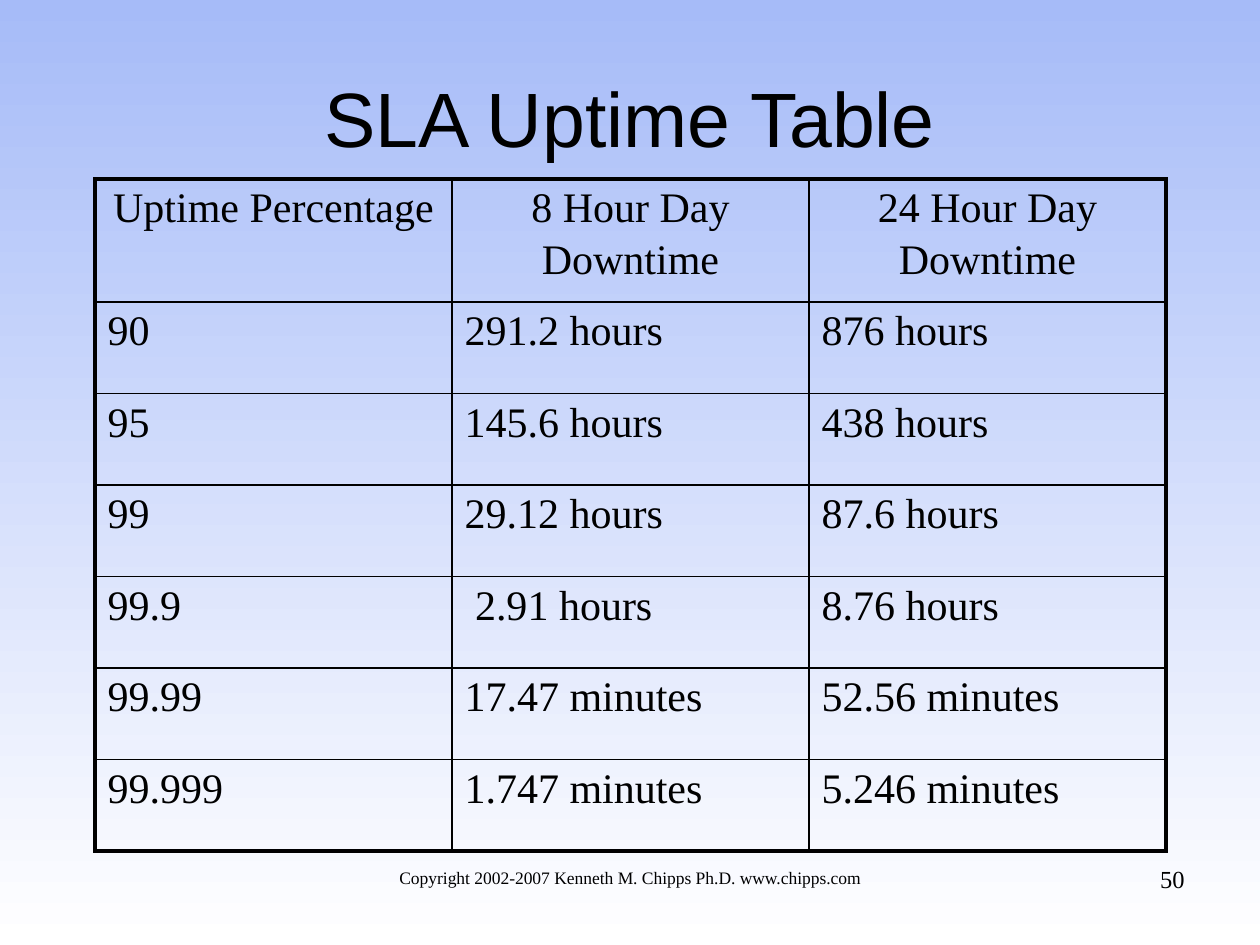
"""Build the SLA uptime table slide."""
import pptx
import pptx.dml.color
import pptx.enum.text
import pptx.oxml
import pptx.oxml.ns
import pptx.util

ALIGN = pptx.enum.text.PP_ALIGN
ANCHOR = pptx.enum.text.MSO_ANCHOR

HEADINGS = ["Uptime Percentage", "8 Hour Day\nDowntime", "24 Hour Day\nDowntime"]
UPTIMES = [
    ["90", "291.2 hours", "876 hours"],
    ["95", "145.6 hours", "438 hours"],
    ["99", "29.12 hours", "87.6 hours"],
    ["99.9", " 2.91 hours", "8.76 hours"],
    ["99.99", "17.47 minutes", "52.56 minutes"],
    ["99.999", "1.747 minutes", "5.246 minutes"],
]


def emu(px):
    return pptx.util.Emu(round(px * 914400 / 126))


def color(value):
    return pptx.dml.color.RGBColor.from_string(value)


class SlideBuilder:
    ink = "000000"
    serif = "Times New Roman"
    sans = "Arial"
    thin, thick = 1, 2.25

    def __init__(self, presentation):
        self.slide = presentation.slides.add_slide(presentation.slide_layouts[6])

    def background(self, top, bottom):
        fill = self.slide.background.fill
        fill.gradient()
        fill.gradient_angle = 270
        for stop, value in zip(fill.gradient_stops, (top, bottom)):
            stop.color.rgb = color(value)

    def add_lines(self, frame, text, size, font, align, space=0):
        for index, line in enumerate(text.split("\n")):
            paragraph = frame.add_paragraph() if index else frame.paragraphs[0]
            paragraph.alignment = align
            paragraph.space_before = pptx.util.Pt(space)
            run = paragraph.add_run()
            run.text = line
            run.font.size = pptx.util.Pt(size)
            run.font.name = font
            run.font.color.rgb = color(self.ink)

    def text(self, box, text, size, font, align, anchor=ANCHOR.TOP):
        shape = self.slide.shapes.add_textbox(*map(emu, box))
        frame = shape.text_frame
        frame.word_wrap = True
        frame.vertical_anchor = anchor
        self.add_lines(frame, text, size, font, align)

    def borders(self, cell, outer_sides):
        properties = cell._tc.get_or_add_tcPr()
        for index, side in enumerate("LRTB"):
            width = pptx.util.Pt(self.thick if side in outer_sides else self.thin)
            properties.insert(index, pptx.oxml.parse_xml(
                f'<a:ln{side} {pptx.oxml.ns.nsdecls("a")} w="{width}"><a:solidFill>'
                f'<a:srgbClr val="{self.ink}"/></a:solidFill></a:ln{side}>'))

    def table(self, box, rows, header_height):
        last_row, last_column = len(rows) - 1, len(rows[0]) - 1
        table = self.slide.shapes.add_table(
            len(rows), len(rows[0]), *map(emu, box)).table
        table.first_row = table.horz_banding = False
        for column in table.columns:
            column.width = emu(box[2] / len(rows[0]))
        body_height = (box[3] - header_height) / last_row
        for r, values in enumerate(rows):
            table.rows[r].height = emu(body_height if r else header_height)
            for c, value in enumerate(values):
                cell = table.cell(r, c)
                cell.fill.background()
                edges = {"L": c == 0, "R": c == last_column,
                         "T": r == 0, "B": r == last_row}
                self.borders(cell, [side for side in edges if edges[side]])
                align = ALIGN.LEFT if r else ALIGN.CENTER
                self.add_lines(cell.text_frame, value, 24, self.serif, align, 3.3)


def main():
    presentation = pptx.Presentation()
    presentation.slide_width, presentation.slide_height = emu(1260), emu(945)
    builder = SlideBuilder(presentation)
    builder.background("A6BBF8", "FFFFFF")
    builder.text((63, 38, 1134, 158), "SLA Uptime Table", 44,
                 builder.sans, ALIGN.CENTER, ANCHOR.MIDDLE)
    builder.table((95, 179, 1071, 672), [HEADINGS] + UPTIMES, 123)
    builder.text((378, 861, 504, 66),
                 "Copyright 2002-2007 Kenneth M. Chipps Ph.D. www.chipps.com",
                 10, builder.serif, ALIGN.CENTER)
    builder.text((903, 858, 294, 66), "50", 14, builder.serif, ALIGN.RIGHT)
    presentation.save("out.pptx")


if __name__ == "__main__":
    main()
